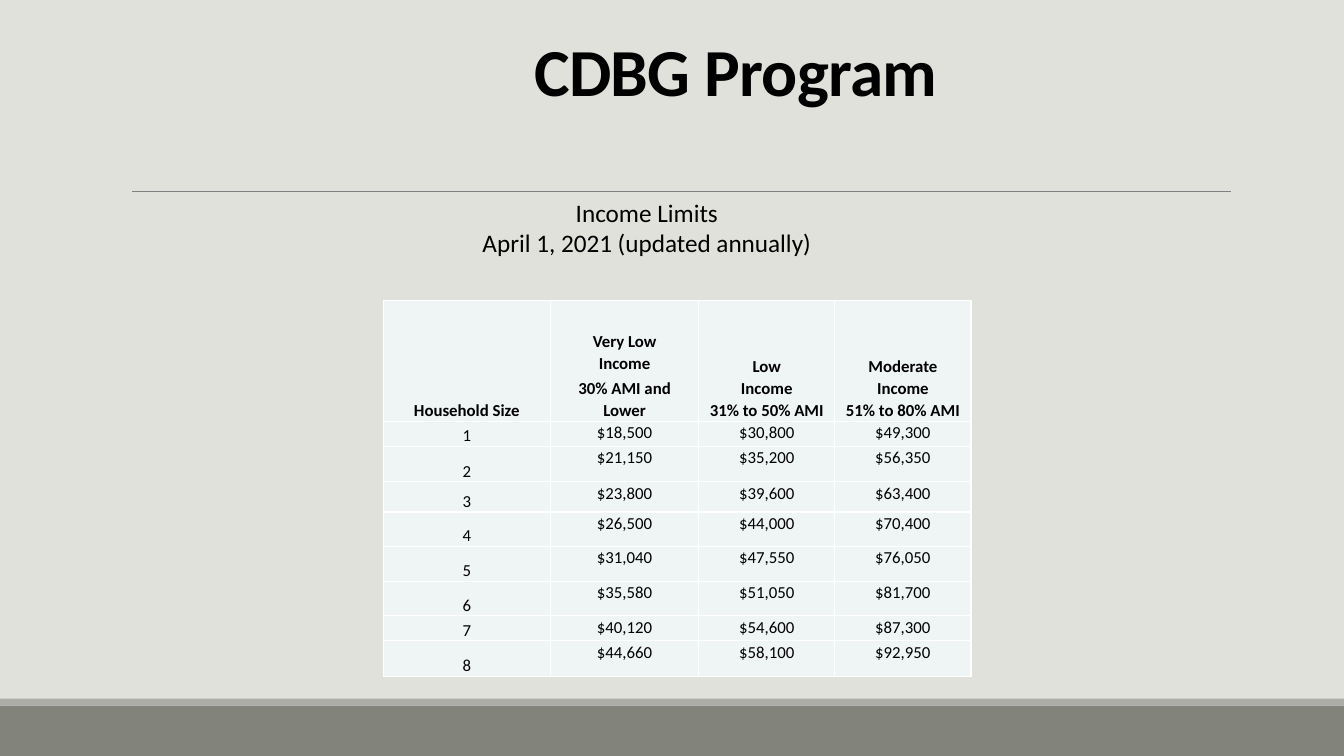
from dataclasses import dataclass

from lxml import etree
from pptx import Presentation
from pptx.dml.color import RGBColor
from pptx.enum.shapes import MSO_CONNECTOR, MSO_SHAPE
from pptx.enum.text import MSO_ANCHOR, MSO_AUTO_SIZE, PP_ALIGN
from pptx.oxml.ns import qn
from pptx.util import Inches, Pt

RECTANGLE = MSO_SHAPE.RECTANGLE
STRAIGHT = MSO_CONNECTOR.STRAIGHT
TOP, BOTTOM = MSO_ANCHOR.TOP, MSO_ANCHOR.BOTTOM
LEFT, CENTER = PP_ALIGN.LEFT, PP_ALIGN.CENTER
NO_FIT = MSO_AUTO_SIZE.NONE
TITLE_ONLY = 5
WIDTH, HEIGHT = Inches(13.33), Inches(7.5)


@dataclass(frozen=True)
class Theme:
    """Colours, type sizes and the font of the deck."""
    font: str = "Calibri"
    ground: str = "E1E1DB"
    band: str = "82847C"
    stripe: str = "ACADA8"
    rule: str = "808080"
    ink: str = "000000"
    cell: str = "EFF4F4"
    border: str = "FFFFFF"
    title: int = 48
    subtitle: int = 18
    body: int = 12


THEME = Theme()
COLUMN_SHARES = (12.45, 11.03, 10.13, 10.13)
ROW_SHARES = (16, 3.33, 4.67, 4, 4.53, 4.67, 4.53, 3.33, 4.67)
HEADINGS = (
    ("Household Size",),
    ("Very Low", "Income", "30% AMI and Lower"),
    ("Low", "Income", "31% to 50% AMI"),
    ("Moderate Income", "51% to 80% AMI"),
)
SPACE_AFTER = ((2.7,), (0, 2.7, 2.7), (0, 0, 2.7), (0, 2.7))
LIMITS = (
    ("$18,500", "$30,800", "$49,300"),
    ("$21,150", "$35,200", "$56,350"),
    ("$23,800", "$39,600", "$63,400"),
    ("$26,500", "$44,000", "$70,400"),
    ("$31,040", "$47,550", "$76,050"),
    ("$35,580", "$51,050", "$81,700"),
    ("$40,120", "$54,600", "$87,300"),
    ("$44,660", "$58,100", "$92,950"),
)


def across(share):
    """Turn a percentage of the slide's width into a length."""
    return int(WIDTH * share / 100)


def down(share):
    """Turn a percentage of the slide's height into a length."""
    return int(HEIGHT * share / 100)


def place(left, top, width, height):
    """Turn four percentages into a position and a size."""
    return across(left), down(top), across(width), down(height)


def apply(target, values):
    """Set each named value on the target."""
    for name, value in values.items():
        setattr(target, name, value)


def paint(fill, colour):
    """Give a fill one solid colour."""
    fill.solid()
    fill.fore_color.rgb = RGBColor.from_string(colour)


def write(para, text, size, bold=False, **layout):
    """Write one formatted span into a paragraph."""
    apply(para, layout)
    span = para.add_run()
    span.text = text
    apply(span.font, {"name": THEME.font, "size": Pt(size), "bold": bold})
    span.font.color.rgb = RGBColor.from_string(THEME.ink)
    return span


def paragraphs(frame, count):
    """Return the wanted number of paragraphs of a text frame."""
    return [frame.paragraphs[0]] + [frame.add_paragraph() for _ in range(count - 1)]


def add_band(page, top, height, colour):
    """Add a plain band over the full width of the slide."""
    band = page.shapes.add_shape(RECTANGLE, *place(0, top, 100, height))
    band.shadow.inherit = False
    paint(band.fill, colour)
    band.line.fill.background()


def add_rule(page, left, right, top):
    """Add a thin horizontal line."""
    rule = page.shapes.add_connector(
        STRAIGHT, across(left), down(top), across(right), down(top))
    rule.line.width = Pt(0.5)
    paint(rule.line.fill, THEME.rule)
    etree.SubElement(rule.element.spPr, qn("a:effectLst"))


def set_title(page, text):
    """Move and format the title placeholder."""
    title = page.shapes.title
    left, top, width, height = place(9, 4.13, 82.52, 21.2)
    apply(title, {"left": left, "top": top, "width": width, "height": height})
    frame = title.text_frame
    apply(frame, {"vertical_anchor": TOP, "auto_size": NO_FIT, "word_wrap": True,
                  "margin_top": Inches(0.1), "margin_left": Inches(4.1)})
    span = write(frame.paragraphs[0], text, THEME.title, True,
                 alignment=LEFT, line_spacing=0.85)
    span.font.element.set("spc", "-50") if hasattr(span.font, "element") else \
        span.font._element.set("spc", "-50") if hasattr(span.font, "_element") else \
        span._r.get_or_add_rPr().set("spc", "-50")


def add_subtitle(page, lines):
    """Add the centred lines under the rule."""
    box = page.shapes.add_textbox(*place(23.11, 25.47, 50.04, 9.47))
    box.text_frame.word_wrap = True
    for para, line in zip(paragraphs(box.text_frame, len(lines)), lines):
        write(para, line, THEME.subtitle, alignment=CENTER)


def add_borders(cell):
    """Draw the four borders of a table cell."""
    properties = cell._tc.get_or_add_tcPr()
    for index, side in enumerate(("a:lnL", "a:lnR", "a:lnT", "a:lnB")):
        border = etree.Element(qn(side), w=str(Pt(1)))
        fill = etree.SubElement(border, qn("a:solidFill"))
        etree.SubElement(fill, qn("a:srgbClr"), val=THEME.border)
        properties.insert(index, border)


def fill_cell(cell, lines, anchor, bold=False, before=0, after=(0,)):
    """Write and format one table cell."""
    apply(cell, {"vertical_anchor": anchor,
                 "margin_left": Inches(0.06), "margin_right": Inches(0.06),
                 "margin_top": 0, "margin_bottom": 0})
    paint(cell.fill, THEME.cell)
    add_borders(cell)
    paras = paragraphs(cell.text_frame, len(lines))
    for index, (para, line, gap) in enumerate(zip(paras, lines, after)):
        write(para, line, THEME.body, bold, alignment=CENTER, line_spacing=1.07,
              space_before=Pt(0 if index else before), space_after=Pt(gap))


def add_limits(page):
    """Add the table of income limits by household size."""
    frame = page.shapes.add_table(
        len(ROW_SHARES), len(COLUMN_SHARES),
        *place(28.51, 39.73, sum(COLUMN_SHARES), sum(ROW_SHARES)))
    table = frame.table
    apply(table, {"first_row": False, "horz_banding": False})
    for column, share in zip(table.columns, COLUMN_SHARES):
        column.width = across(share)
    for row, share in zip(table.rows, ROW_SHARES):
        row.height = down(share)
    for index, (lines, after) in enumerate(zip(HEADINGS, SPACE_AFTER)):
        fill_cell(table.cell(0, index), lines, BOTTOM, True, 5, after)
    for size, limits in enumerate(LIMITS, 1):
        fill_cell(table.cell(size, 0), (str(size),), BOTTOM, before=5, after=(2.7,))
        for index, limit in enumerate(limits, 1):
            fill_cell(table.cell(size, index), (limit,), TOP)


def main():
    """Build the slide and save the deck."""
    deck = Presentation()
    apply(deck, {"slide_width": WIDTH, "slide_height": HEIGHT})
    page = deck.slides.add_slide(deck.slide_layouts[TITLE_ONLY])
    paint(page.background.fill, THEME.ground)
    add_band(page, 93.33, 6.67, THEME.band)
    add_band(page, 92.4, 0.93, THEME.stripe)
    add_rule(page, 9.83, 91.6, 25.33)
    set_title(page, "CDBG Program")
    add_subtitle(page, ("Income Limits", "April 1, 2021 (updated annually)"))
    add_limits(page)
    deck.save("out.pptx")


if __name__ == "__main__":
    main()
